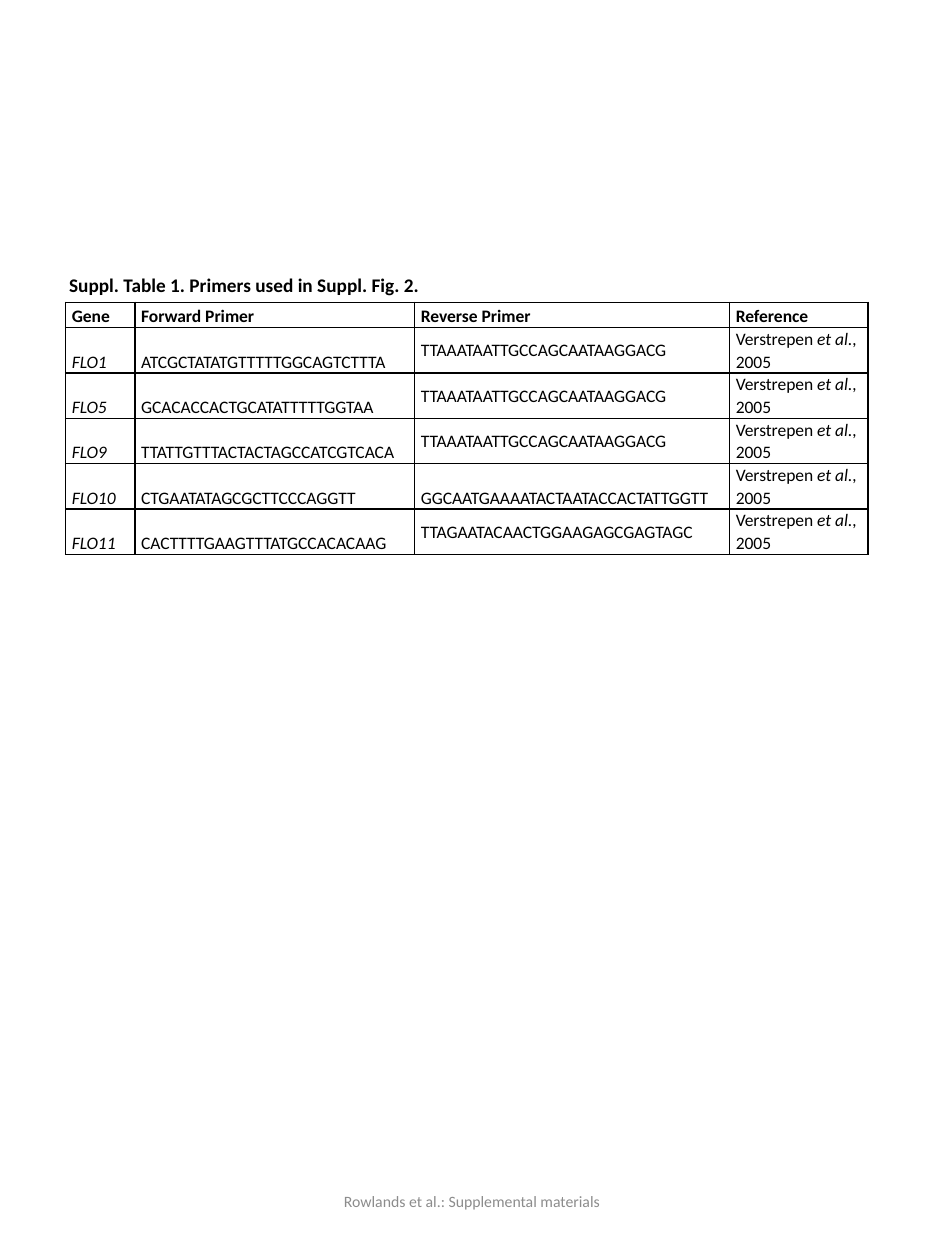
import pptx
import pptx.util
import pptx.dml.color
import pptx.enum.text
import pptx.oxml.ns
import lxml.etree

Inches, Pt = pptx.util.Inches, pptx.util.Pt
Anchor, Align = pptx.enum.text.MSO_ANCHOR, pptx.enum.text.PP_ALIGN

# Content
CAPTION = "Suppl. Table 1. Primers used in Suppl. Fig. 2."
FOOTER = "Rowlands et al.: Supplemental materials"
HEADERS = ["Gene", "Forward Primer", "Reverse Primer", "Reference"]
SHARED_REVERSE = "TTAAATAATTGCCAGCAATAAGGACG"
# Gene, forward primer, reverse primer, anchor of the reverse primer
PRIMERS = [
    ("FLO1", "ATCGCTATATGTTTTTGGCAGTCTTTA", SHARED_REVERSE, Anchor.MIDDLE),
    ("FLO5", "GCACACCACTGCATATTTTTGGTAA", SHARED_REVERSE, Anchor.MIDDLE),
    ("FLO9", "TTATTGTTTACTACTAGCCATCGTCACA", SHARED_REVERSE, Anchor.MIDDLE),
    ("FLO10", "CTGAATATAGCGCTTCCCAGGTT", "GGCAATGAAAATACTAATACCACTATTGGTT", Anchor.BOTTOM),
    ("FLO11", "CACTTTTGAAGTTTATGCCACACAAG", "TTAGAATACAACTGGAAGAGCGAGTAGC", Anchor.MIDDLE),
]
REFERENCE = [("Verstrepen ", False), ("et al., ", True), ("2005", False)]

# Layout, in inches
SLIDE_SIZE = (7.5, 10)
CAPTION_BOX = (0.45, 2.12, 3.44, 0.29)
FOOTER_BOX = (2.48, 9.27, 2.53, 0.53)
TABLE_LEFT, TABLE_TOP = 0.52, 2.4
COLUMN_WIDTHS = [0.55, 2.22, 2.5, 1.1]
ROW_HEIGHTS = [0.2] + [0.36] * len(PRIMERS)

THEME = {
    "font": "Calibri", "ink": "000000", "muted": "8C8C8C",
    "caption": 11, "cell": 10, "footer": 9,
    "border": 1, "line_spacing": 1.07, "cell_margin": 0.05,
}


def style_run(run, size, color, bold=False, italic=False):
    run.font.name = THEME["font"]
    run.font.size = Pt(size)
    run.font.color.rgb = pptx.dml.color.RGBColor.from_string(color)
    run.font.bold, run.font.italic = bold, italic


def add_label(slide, box, text, size, color, bold=False,
              anchor=Anchor.TOP, align=Align.LEFT):
    text_frame = slide.shapes.add_textbox(*map(Inches, box)).text_frame
    text_frame.word_wrap = True
    text_frame.vertical_anchor = anchor
    text_frame.text = text
    paragraph = text_frame.paragraphs[0]
    paragraph.alignment = align
    style_run(paragraph.runs[0], size, color, bold)


def add_borders(cell):
    properties = cell._tc.get_or_add_tcPr()
    qn = pptx.oxml.ns.qn
    for position, side in enumerate(("lnL", "lnR", "lnT", "lnB")):
        line = lxml.etree.Element(qn(f"a:{side}"), w=str(Pt(THEME["border"])))
        fill = lxml.etree.SubElement(line, qn("a:solidFill"))
        lxml.etree.SubElement(fill, qn("a:srgbClr"), val=THEME["ink"])
        properties.insert(position, line)


def fill_cell(cell, pieces, bold=False, anchor=Anchor.BOTTOM):
    cell.margin_left = cell.margin_right = Inches(THEME["cell_margin"])
    cell.margin_top = cell.margin_bottom = 0
    cell.vertical_anchor = anchor
    cell.fill.background()
    add_borders(cell)
    paragraph = cell.text_frame.paragraphs[0]
    paragraph.line_spacing = THEME["line_spacing"]
    for text, italic in pieces:
        run = paragraph.add_run()
        run.text = text
        style_run(run, THEME["cell"], THEME["ink"], bold, italic)


def add_primer_table(slide):
    table = slide.shapes.add_table(
        len(ROW_HEIGHTS), len(COLUMN_WIDTHS), Inches(TABLE_LEFT), Inches(TABLE_TOP),
        Inches(sum(COLUMN_WIDTHS)), Inches(sum(ROW_HEIGHTS))).table
    table.horz_banding = False
    for column, width in zip(table.columns, COLUMN_WIDTHS):
        column.width = Inches(width)
    for row, height in zip(table.rows, ROW_HEIGHTS):
        row.height = Inches(height)

    for index, header in enumerate(HEADERS):
        fill_cell(table.cell(0, index), [(header, False)], bold=True)
    for index, (gene, forward, reverse, anchor) in enumerate(PRIMERS, start=1):
        fill_cell(table.cell(index, 0), [(gene, True)])
        fill_cell(table.cell(index, 1), [(forward, False)])
        fill_cell(table.cell(index, 2), [(reverse, False)], anchor=anchor)
        fill_cell(table.cell(index, 3), REFERENCE)


def main():
    presentation = pptx.Presentation()
    presentation.slide_width, presentation.slide_height = map(Inches, SLIDE_SIZE)
    slide = presentation.slides.add_slide(presentation.slide_layouts[6])

    add_label(slide, FOOTER_BOX, FOOTER, THEME["footer"], THEME["muted"],
              anchor=Anchor.MIDDLE, align=Align.CENTER)
    add_primer_table(slide)
    add_label(slide, CAPTION_BOX, CAPTION, THEME["caption"], THEME["ink"], bold=True)

    presentation.save("out.pptx")


if __name__ == "__main__":
    main()
